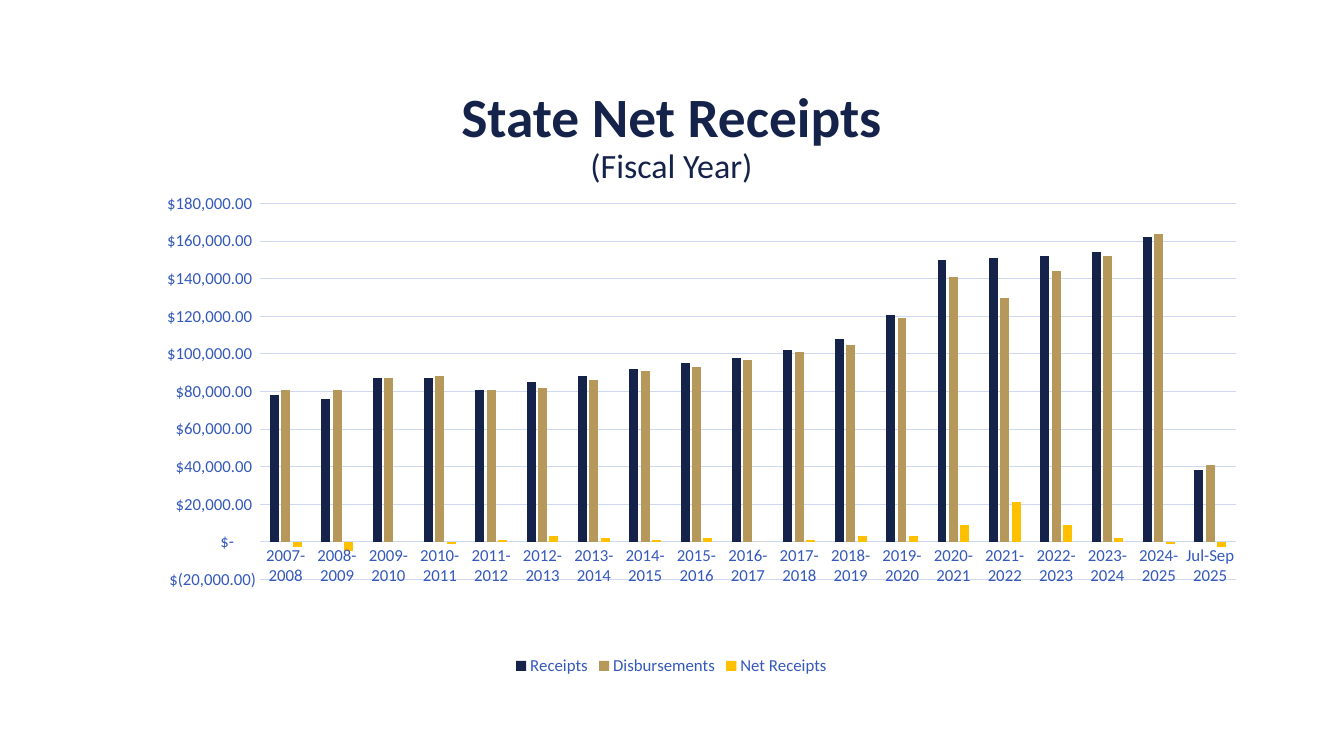
from dataclasses import dataclass

from lxml import etree
from pptx import Presentation
from pptx.chart.data import CategoryChartData
from pptx.dml.color import RGBColor
from pptx.enum.chart import XL_CHART_TYPE, XL_LEGEND_POSITION, XL_TICK_MARK
from pptx.enum.text import MSO_ANCHOR, PP_ALIGN
from pptx.oxml.ns import qn
from pptx.util import Pt

COLUMNS = XL_CHART_TYPE.COLUMN_CLUSTERED
BOTTOM = XL_LEGEND_POSITION.BOTTOM
NO_TICK = XL_TICK_MARK.NONE
ANCHOR_BOTTOM = MSO_ANCHOR.BOTTOM
CENTER = PP_ALIGN.CENTER

SLIDE_W, SLIDE_H = 1344, 756
EMU_PER_PX = 12192000 / SLIDE_W
LEFT, WIDTH = 92, 1159
TITLE_BOTTOM_INSET = 36  # keeps the subtitle clear of the chart


@dataclass(frozen=True)
class Theme:
    font: str = "Calibri"
    title: str = "152249"
    navy: str = "15234A"
    tan: str = "B5985A"
    gold: str = "FFC000"
    label: str = "3559BB"
    grid: str = "CFD8F1"
    title_size: float = 39.6
    subtitle_size: float = 24.3
    label_size: float = 12
    line_width: float = 0.75


THEME = Theme()

YEARS = [f"{y}-{y + 1}" for y in range(2007, 2025)] + ["Jul-Sep 2025"]
DOLLARS = r'_("$"* #,##0.00_);_("$"* \(#,##0.00\);_("$"* "-"??_);_(@_)'
PLOT_AREA = {"x": 0.145, "y": 0.024, "w": 0.842, "h": 0.77}

# Name, colour, values in thousands
SERIES = [
    ("Receipts", THEME.navy,
     [78, 76, 87, 87, 81, 85, 88, 92, 95, 98, 102, 108, 121, 150, 151, 152,
      154, 162, 38]),
    ("Disbursements", THEME.tan,
     [81, 81, 87, 88, 81, 82, 86, 91, 93, 97, 101, 105, 119, 141, 130, 144,
      152, 164, 41]),
    ("Net Receipts", THEME.gold,
     [-3, -5, 0, -1, 1, 3, 2, 1, 2, 0, 1, 3, 3, 9, 21, 9, 2, -1, -3]),
]


def px(n):
    return round(n * EMU_PER_PX)


def set_font(font, size, color, bold=False):
    font.name = THEME.font
    font.size = Pt(size)
    font.bold = bold
    font.color.rgb = RGBColor.from_string(color)


def set_line(line):
    line.width = Pt(THEME.line_width)
    line.color.rgb = RGBColor.from_string(THEME.grid)


def add_title(s, box, title, subtitle):
    tf = s.shapes.add_textbox(*map(px, box)).text_frame
    tf.word_wrap = True
    tf.vertical_anchor = ANCHOR_BOTTOM
    tf.margin_bottom = px(TITLE_BOTTOM_INSET)
    p = tf.paragraphs[0]
    p.alignment = CENTER
    p.line_spacing = 0.9
    r = p.add_run()
    r.text = title
    set_font(r.font, THEME.title_size, THEME.title, bold=True)
    p.add_line_break()
    r = p.add_run()
    r.text = subtitle
    set_font(r.font, THEME.subtitle_size, THEME.navy)


def fix_plot_area(chart):
    """Place the inner plot area by fractions of the chart."""
    area = chart._chartSpace.find(f".//{qn('c:plotArea')}")
    layout = area.find(qn("c:layout"))
    if layout is None:
        layout = etree.Element(qn("c:layout"))
        area.insert(0, layout)
    manual = etree.SubElement(layout, qn("c:manualLayout"))
    settings = {"layoutTarget": "inner", "xMode": "edge", "yMode": "edge",
                **PLOT_AREA}
    for tag, value in settings.items():
        etree.SubElement(manual, qn(f"c:{tag}")).set("val", str(value))


def style_axes(chart):
    for axis in (chart.category_axis, chart.value_axis):
        axis.major_tick_mark = axis.minor_tick_mark = NO_TICK
        set_font(axis.tick_labels.font, THEME.label_size, THEME.label)
    set_line(chart.category_axis.format.line)

    values = chart.value_axis
    values.minimum_scale, values.maximum_scale = -20000, 180000
    values.major_unit = 20000
    values.format.line.fill.background()
    values.has_major_gridlines = True
    set_line(values.major_gridlines.format.line)
    values.tick_labels.number_format = DOLLARS
    values.tick_labels.number_format_is_linked = False


def add_receipts_chart(s, box):
    data = CategoryChartData()
    data.categories = YEARS
    for name, _, thousands in SERIES:
        data.add_series(name, [v * 1000 for v in thousands])
    chart = s.shapes.add_chart(COLUMNS, *map(px, box), data).chart
    set_font(chart.font, THEME.label_size, THEME.label)
    chart.has_title = False
    chart.has_legend = True
    chart.legend.position = BOTTOM
    chart.legend.include_in_layout = False
    set_font(chart.legend.font, THEME.label_size, THEME.label)

    plot = chart.plots[0]
    plot.gap_width, plot.overlap = 219, -27
    plot.vary_by_categories = False
    for series, (_, color, _) in zip(plot.series, SERIES):
        series.invert_if_negative = False
        series.format.fill.solid()
        series.format.fill.fore_color.rgb = RGBColor.from_string(color)
    style_axes(chart)
    fix_plot_area(chart)


def main():
    prs = Presentation()
    prs.slide_width, prs.slide_height = px(SLIDE_W), px(SLIDE_H)
    s = prs.slides.add_slide(prs.slide_layouts[6])
    add_title(s, (LEFT, 76, WIDTH, 146), "State Net Receipts", "(Fiscal Year)")
    add_receipts_chart(s, (LEFT, 192, WIDTH, 488))
    prs.save("out.pptx")


if __name__ == "__main__":
    main()
